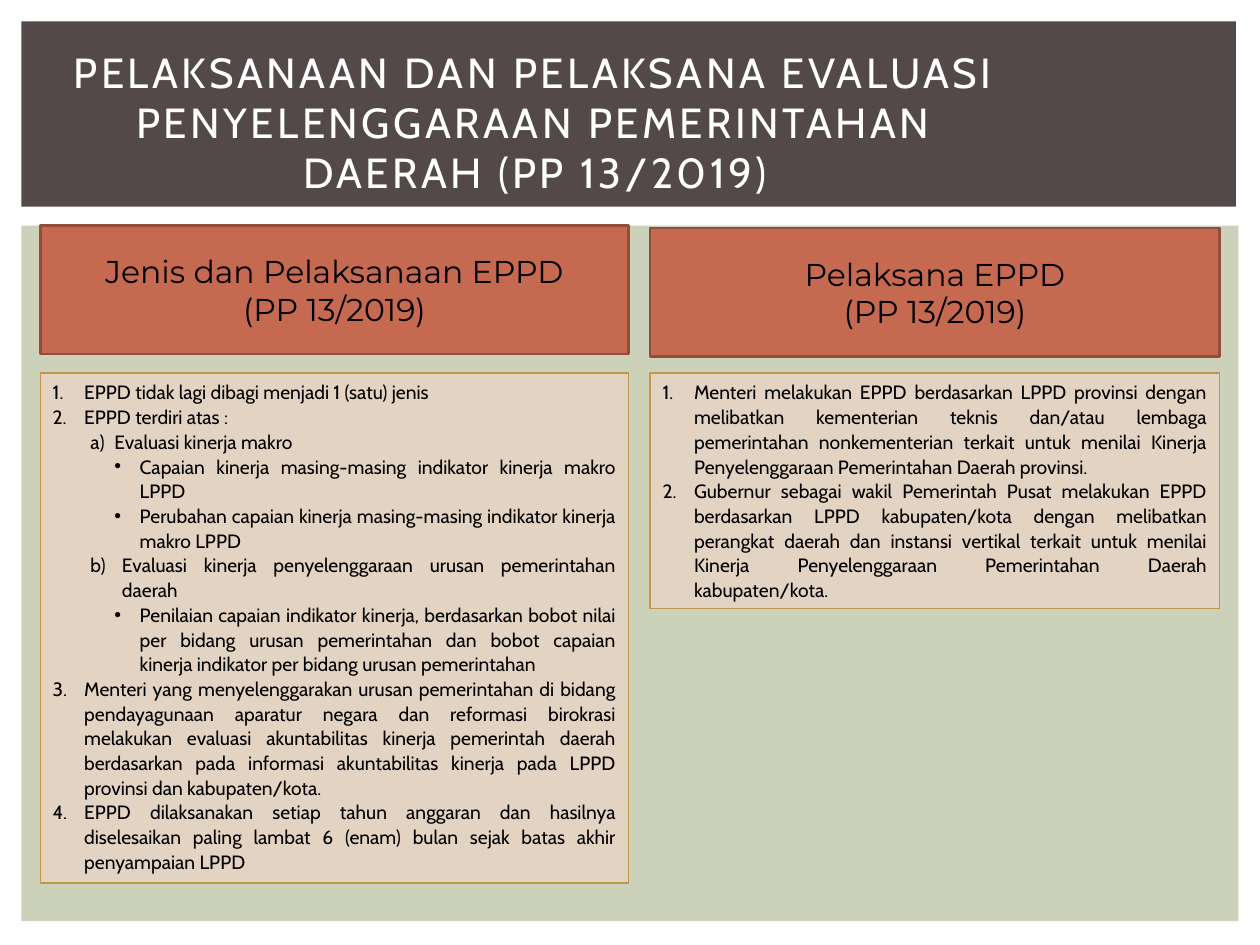
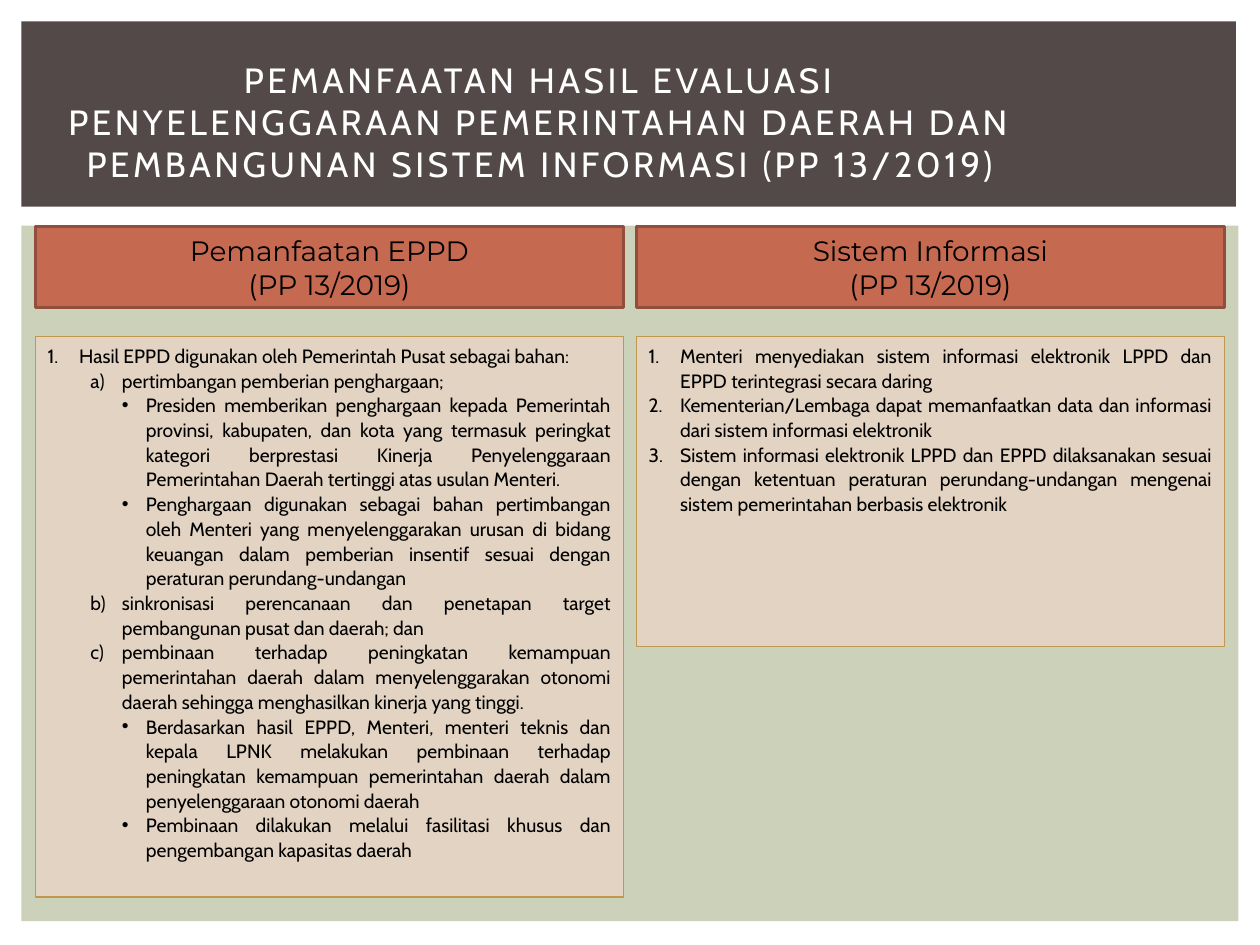
from dataclasses import dataclass
from lxml.etree import SubElement as Sub
from pptx import Presentation
from pptx.dml.color import RGBColor as Rgb
from pptx.enum.shapes import MSO_SHAPE as Kind
from pptx.enum.text import MSO_ANCHOR as Anchor, MSO_AUTO_SIZE as Fit, PP_ALIGN as Align
from pptx.oxml.ns import qn
from pptx.util import Inches, Pt

COLS, ROWS = 100, 75
CELL = Inches(0.1)


@dataclass(frozen=True)
class Theme:
    back: str = "CCD1B9"
    band: str = "534949"
    head: str = "C66951"
    rim: str = "924E3C"
    card: str = "E2D3C2"
    edge: str = "BF974D"
    white: str = "FFFFFF"
    black: str = "000000"
    font: str = "Cabin"
    bold: str = "Montserrat"
    body: int = 11
    space: float = 1.07
    track: int = 200


LOOK = Theme()
NUM, LET, DOT, WIDE = "num", "let", "dot", "wide"
MARKS = {
    NUM: (0, "buAutoNum", {"type": "arabicPeriod"}),
    LET: (1, "buAutoNum", {"type": "alphaLcParenR"}),
    WIDE: (1, "buAutoNum", {"type": "alphaLcParenR"}),
    DOT: (2, "buChar", {"char": "•"}),
}
TIGHT = {NUM: (0.25, 0.25), LET: (0.49, 0.19), WIDE: (0.55, 0.25), DOT: (0.69, 0.2)}
LOOSE = {NUM: (0.25, 0.25), LET: (0.59, 0.25), DOT: (0.78, 0.19)}


def grid(*cells):
    return [round(cell * CELL) for cell in cells]


def style(frame, font, size, color, align):
    for para in frame.paragraphs:
        para.alignment = align
        for run in para.runs:
            run.font.name = font
            run.font.size = Pt(size)
            run.font.color.rgb = Rgb.from_string(color)


def add_box(slide, area, fill, line=None, width=0):
    box = slide.shapes.add_shape(Kind.RECTANGLE, *grid(*area))
    box.shadow.inherit = False
    box.fill.solid()
    box.fill.fore_color.rgb = Rgb.from_string(fill)
    if line:
        box.line.color.rgb = Rgb.from_string(line)
        box.line.width = Pt(width)
    else:
        box.line.fill.background()
    box.text_frame.word_wrap = True
    return box


def add_bands(deck, layout):
    slide = deck.slides[0]
    areas = (((1.7, 17.9, 96.6, 55.2), LOOK.back), ((1.7, 1.7, 96.4, 14.7), LOOK.band))
    for spot, (area, fill) in enumerate(areas, 2):
        layout.shapes.element.insert(spot, add_box(slide, area, fill).element)


def set_title(slide, text, width, size):
    title = slide.shapes.title
    title.left, title.top, title.width, title.height = grid(4.2, 3.9, width, 11.5)
    frame = title.text_frame
    frame.text = text
    frame.word_wrap = True
    frame.auto_size = Fit.NONE
    frame.vertical_anchor = Anchor.MIDDLE
    style(frame, LOOK.font, size, LOOK.white, Align.CENTER)
    for run in frame.paragraphs[0].runs:
        run.font._element.set("spc", str(LOOK.track))


def add_head(slide, area, text, size):
    frame = add_box(slide, area, LOOK.head, LOOK.rim, 1.5).text_frame
    frame.text = f"{text}\n(PP 13/2019)"
    frame.vertical_anchor = Anchor.MIDDLE
    style(frame, LOOK.bold, size, LOOK.black, Align.CENTER)


def set_mark(para, mark, dents):
    level, tag, attrs = MARKS[mark]
    left, hang = dents[mark]
    para.level = level
    para.line_spacing = LOOK.space
    props = para._p.get_or_add_pPr()
    props.set("marL", str(Inches(left)))
    props.set("indent", str(-Inches(hang)))
    if mark == DOT:
        Sub(props, qn("a:buFont"), typeface="Arial")
    Sub(props, qn("a:" + tag), **attrs)


def add_list(slide, area, items, dents):
    frame = add_box(slide, area, LOOK.card, LOOK.edge, 0.79).text_frame
    frame.vertical_anchor = Anchor.TOP
    frame.text = "\n".join(text for mark, text in items)
    for para, (mark, text) in zip(frame.paragraphs, items):
        set_mark(para, mark, dents)
    style(frame, LOOK.font, LOOK.body, LOOK.black, Align.JUSTIFY)


def add_panel(slide, left, width, head, body, size, dents):
    text, top, tall = head
    items, start, high = body
    add_head(slide, (left, top, width, tall), text, size)
    add_list(slide, (left, start, width, high), items, dents)


KINDS = [
    (NUM, "EPPD tidak lagi dibagi menjadi 1 (satu) jenis"),
    (NUM, "EPPD terdiri atas :"),
    (LET, "Evaluasi kinerja makro"),
    (DOT, "Capaian kinerja masing-masing indikator kinerja makro LPPD"),
    (DOT, "Perubahan capaian kinerja masing-masing indikator kinerja makro LPPD"),
    (WIDE, "Evaluasi kinerja penyelenggaraan urusan pemerintahan daerah"),
    (DOT, "Penilaian capaian indikator kinerja, berdasarkan bobot nilai per bidang urusan "
          "pemerintahan dan bobot capaian kinerja indikator per bidang urusan pemerintahan"),
    (NUM, "Menteri yang menyelenggarakan urusan pemerintahan di bidang pendayagunaan aparatur "
          "negara dan reformasi birokrasi melakukan evaluasi akuntabilitas kinerja pemerintah "
          "daerah berdasarkan pada informasi akuntabilitas kinerja pada LPPD provinsi dan "
          "kabupaten/kota."),
    (NUM, "EPPD dilaksanakan setiap tahun anggaran dan hasilnya diselesaikan paling lambat 6 "
          "(enam) bulan sejak batas akhir penyampaian LPPD"),
]
ACTORS = [
    (NUM, "Menteri melakukan EPPD berdasarkan LPPD provinsi dengan melibatkan kementerian teknis "
          "dan/atau lembaga pemerintahan nonkementerian terkait untuk menilai Kinerja "
          "Penyelenggaraan Pemerintahan Daerah provinsi."),
    (NUM, "Gubernur sebagai wakil Pemerintah Pusat melakukan EPPD berdasarkan LPPD "
          "kabupaten/kota dengan melibatkan perangkat daerah dan instansi vertikal terkait untuk "
          "menilai Kinerja Penyelenggaraan Pemerintahan Daerah kabupaten/kota."),
]
USES = [
    (NUM, "Hasil EPPD digunakan oleh Pemerintah Pusat sebagai bahan:"),
    (LET, "pertimbangan pemberian penghargaan;"),
    (DOT, "Presiden memberikan penghargaan kepada Pemerintah provinsi, kabupaten, dan kota yang "
          "termasuk peringkat kategori berprestasi Kinerja Penyelenggaraan Pemerintahan Daerah "
          "tertinggi atas usulan Menteri."),
    (DOT, "Penghargaan digunakan sebagai bahan pertimbangan oleh Menteri yang menyelenggarakan "
          "urusan di bidang keuangan dalam pemberian insentif sesuai dengan peraturan "
          "perundang-undangan"),
    (LET, "sinkronisasi perencanaan dan penetapan target pembangunan pusat dan daerah; dan"),
    (LET, "pembinaan terhadap peningkatan kemampuan pemerintahan daerah dalam menyelenggarakan "
          "otonomi daerah sehingga menghasilkan kinerja yang tinggi."),
    (DOT, "Berdasarkan hasil EPPD, Menteri, menteri teknis dan kepala LPNK melakukan pembinaan "
          "terhadap peningkatan kemampuan pemerintahan daerah dalam penyelenggaraan otonomi "
          "daerah"),
    (DOT, "Pembinaan dilakukan melalui fasilitasi khusus dan pengembangan kapasitas daerah"),
]
SYSTEM = [
    (NUM, "Menteri menyediakan sistem informasi elektronik LPPD dan EPPD terintegrasi secara "
          "daring"),
    (NUM, "Kementerian/Lembaga dapat memanfaatkan data dan informasi dari sistem informasi "
          "elektronik"),
    (NUM, "Sistem informasi elektronik LPPD dan EPPD dilaksanakan sesuai dengan ketentuan "
          "peraturan perundang-undangan mengenai sistem pemerintahan berbasis elektronik"),
]


def main():
    deck = Presentation()
    deck.slide_width, deck.slide_height = grid(COLS, ROWS)
    layout = deck.slide_layouts[5]
    first, second = (deck.slides.add_slide(layout) for turn in range(2))
    add_bands(deck, layout)

    set_title(first, "PELAKSANAAN DAN PELAKSANA EVALUASI PENYELENGGARAAN PEMERINTAHAN "
                     "DAERAH (PP 13/2019)", 76.5, 24)
    add_panel(first, 3.2, 46.7, ("Jenis dan Pelaksanaan EPPD", 17.9, 10.2),
              (KINDS, 29.6, 40.5), 18, TIGHT)
    add_panel(first, 51.6, 45.2, ("Pelaksana EPPD", 18.1, 10.2),
              (ACTORS, 29.6, 18.7), 18, TIGHT)

    set_title(second, "PEMANFAATAN HASIL EVALUASI PENYELENGGARAAN PEMERINTAHAN DAERAH DAN "
                      "PEMBANGUNAN SISTEM INFORMASI (PP 13/2019)", 77.3, 20)
    add_panel(second, 2.8, 46.7, ("Pemanfaatan EPPD", 18, 6.4),
              (USES, 26.7, 44.5), 16, LOOSE)
    add_panel(second, 50.5, 46.7, ("Sistem Informasi", 18, 6.4),
              (SYSTEM, 26.7, 24.6), 16, LOOSE)
    deck.save("out.pptx")


if __name__ == "__main__":
    main()
